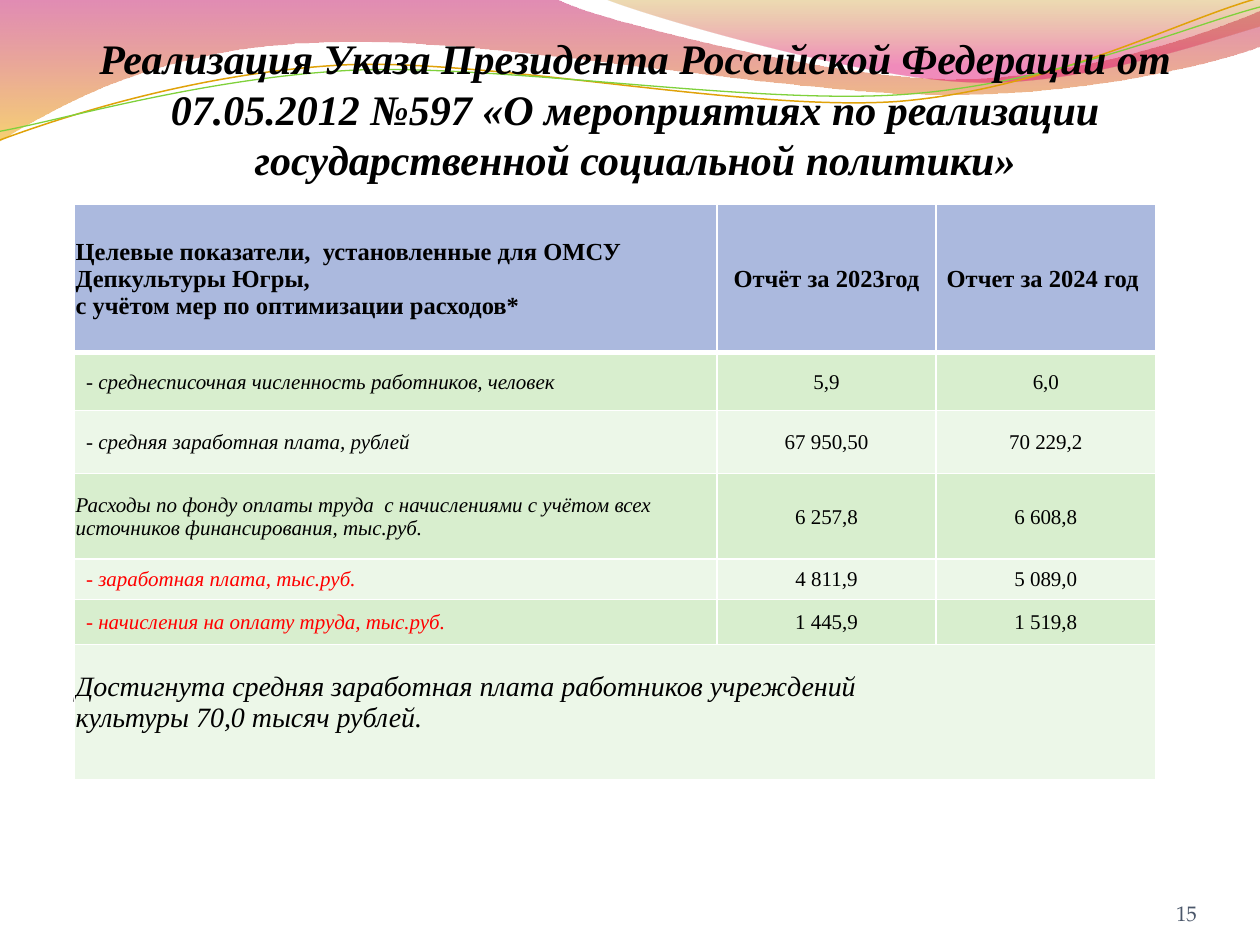
import pptx
import pptx.dml.color
import pptx.enum.text
import pptx.oxml
import pptx.oxml.ns
import pptx.util

Pt = pptx.util.Pt
RGBColor = pptx.dml.color.RGBColor
ALIGN = pptx.enum.text.PP_ALIGN
ANCHOR = pptx.enum.text.MSO_ANCHOR
qn = pptx.oxml.ns.qn

BLACK = RGBColor(0x00, 0x00, 0x00)
WHITE = RGBColor(0xFF, 0xFF, 0xFF)
RED = RGBColor(0xFF, 0x00, 0x00)
SLATE = RGBColor(0x4B, 0x57, 0x6A)
HEADER_BLUE = RGBColor(0xAB, 0xB9, 0xDE)
BAND_DARK = RGBColor(0xD8, 0xEE, 0xCE)
BAND_LIGHT = RGBColor(0xEC, 0xF7, 0xE8)
CRIMSON = RGBColor(0xBD, 0x00, 0x59)
AMBER = RGBColor(0xF0, 0xAB, 0x00)
OCHRE = RGBColor(0xC3, 0x8B, 0x00)
PINK = RGBColor(0xE1, 0x00, 0x6B)
GOLD = RGBColor(0xE0, 0xA2, 0x09)
GREEN = RGBColor(0x7F, 0xD1, 0x3B)

SERIF = "Times New Roman"
PAGE_FONT = "TeX Gyre Pagella"
NAMESPACE = 'xmlns:a="http://schemas.openxmlformats.org/drawingml/2006/main"'

RIBBONS = [
    ([(0, 0), (317, -1), (343, 12, 478, 45, 546, 45), (614, 45, 690, 19, 720, 6),
      (721, 26), (708, 32, 626, 55, 537, 54), (448, 54, 275, 20, 185, 24),
      (93, 26, 33, 60, -1, 81)],
     [(0, CRIMSON, 45), (1, AMBER, 55)]),
    ([(345, -1), (366, 8, 491, 45, 554, 47), (616, 50, 692, 23, 720, 15), (720, 0)],
     [(0, OCHRE, 30), (0.8, PINK, 45)]),
]
THREADS = [
    ([(0, 80), (35, 67, 114, 41, 199, 37), (284, 34, 427, 64, 513, 58),
      (600, 51, 675, 11, 719, -1)], GOLD, 0.85),
    ([(0, 75), (34, 69, 118, 44, 204, 40), (290, 37, 430, 60, 516, 54),
      (602, 48, 678, 15, 720, 4)], GREEN, 0.75),
]

COLUMN_WIDTHS = [367.2, 125.3, 125.3]
HEADERS = ["Целевые показатели,  установленные для ОМСУ Депкультуры Югры,\v"
           "с учётом мер по оптимизации расходов*",
           "Отчёт за 2023год", "Отчет за 2024 год "]
INDICATORS = [
    (33.1, BLACK, "- среднесписочная численность работников, человек", "5,9", "6,0"),
    (36, BLACK, "- средняя заработная плата, рублей", "67 950,50", "70 229,2"),
    (49, BLACK, "Расходы по фонду оплаты труда  с начислениями с учётом всех "
     "источников финансирования, тыс.руб.", "6 257,8", "6 608,8"),
    (23, RED, "- заработная плата, тыс.руб.", "4 811,9", "5 089,0"),
    (25.9, RED, "- начисления на оплату труда, тыс.руб.", "1 445,9", "1 519,8"),
]
CONCLUSION = ("Достигнута средняя заработная плата работников учреждений "
              "культуры 70,0 тысяч рублей.")


def write_text(frame, text, size=12, font=SERIF, color=BLACK, bold=False, italic=False,
               align=ALIGN.LEFT):
    paragraph = frame.paragraphs[0]
    paragraph.text = text
    paragraph.alignment = align
    for run in paragraph.runs:
        run.font.name = font
        run.font.size = Pt(size)
        run.font.color.rgb = color
        run.font.bold = bold
        run.font.italic = italic


def add_curve(slide, left, top, outline, close):
    corners = [(Pt(left + segment[-2]), Pt(top + segment[-1])) for segment in outline]
    builder = slide.shapes.build_freeform(*corners[0])
    builder.add_line_segments(corners[1:], close=close)
    curve = builder.convert_to_shape()
    curve.shadow.inherit = False
    for node, segment in zip(list(curve._element.iter(qn("a:lnTo"))), outline[1:]):
        if len(segment) == 6:
            points = "".join(
                f'<a:pt x="{Pt(left + x) - curve.left}" y="{Pt(top + y) - curve.top}"/>'
                for x, y in zip(segment[::2], segment[1::2]))
            bend = pptx.oxml.parse_xml(f"<a:cubicBezTo {NAMESPACE}>{points}</a:cubicBezTo>")
            node.getparent().replace(node, bend)
    return curve


def add_waves(slide, left, top):
    for outline, stops in RIBBONS:
        ribbon = add_curve(slide, left, top, outline, True)
        ribbon.line.fill.background()
        ribbon.fill.gradient()
        ribbon.fill.gradient_angle = 270
        for stop, (position, color, _) in zip(ribbon.fill.gradient_stops, stops):
            stop.position = position
            stop.color.rgb = color
        for node, (_, _, opacity) in zip(ribbon._element.spPr.iter(qn("a:srgbClr")), stops):
            node.append(pptx.oxml.parse_xml(f'<a:alpha {NAMESPACE} val="{opacity * 1000}"/>'))
    for outline, color, width in THREADS:
        thread = add_curve(slide, left, top, outline, False)
        thread.fill.background()
        thread.line.color.rgb = color
        thread.line.width = Pt(width)


def add_label(slide, left, top, width, height, text, margin_top=0, **style):
    frame = slide.shapes.add_textbox(Pt(left), Pt(top), Pt(width), Pt(height)).text_frame
    frame.word_wrap = True
    frame.vertical_anchor = ANCHOR.BOTTOM
    frame.margin_left = frame.margin_right = frame.margin_bottom = 0
    frame.margin_top = Pt(margin_top)
    write_text(frame, text, **style)


def format_cell(cell, color, indent=0, margin_bottom=0, **widths):
    cell.vertical_anchor = ANCHOR.MIDDLE
    cell.margin_left = Pt(0.72 + indent)
    cell.margin_right = cell.margin_top = Pt(0.72)
    cell.margin_bottom = Pt(margin_bottom)
    cell.fill.solid()
    cell.fill.fore_color.rgb = color
    properties = cell._tc.get_or_add_tcPr()
    for index, side in enumerate(("L", "R", "T", "B")):
        width = widths.get(side, 1)
        paint = f'<a:solidFill><a:srgbClr val="{WHITE}"/></a:solidFill>' if width else "<a:noFill/>"
        properties.insert(index, pptx.oxml.parse_xml(
            f'<a:ln{side} {NAMESPACE} w="{Pt(width)}">{paint}</a:ln{side}>'))


def add_indicator_table(slide, left, top):
    heights = [84.6] + [row[0] for row in INDICATORS] + [77]
    table = slide.shapes.add_table(len(heights), len(COLUMN_WIDTHS), Pt(left), Pt(top),
                                   Pt(sum(COLUMN_WIDTHS)), Pt(sum(heights))).table
    table.first_row = table.horz_banding = False
    for column, width in zip(table.columns, COLUMN_WIDTHS):
        column.width = Pt(width)
    for row, height in zip(table.rows, heights):
        row.height = Pt(height)

    for column, header in enumerate(HEADERS):
        cell = table.cell(0, column)
        format_cell(cell, HEADER_BLUE, B=3)
        write_text(cell.text_frame, header, size=14, bold=True,
                   align=ALIGN.CENTER if column else ALIGN.LEFT)

    for row, (_, color, *texts) in enumerate(INDICATORS, 1):
        for column, text in enumerate(texts):
            cell = table.cell(row, column)
            format_cell(cell, BAND_DARK if row % 2 else BAND_LIGHT,
                        indent=6 if text.startswith("-") else 0, T=3 if row == 1 else 1)
            write_text(cell.text_frame, text, color=BLACK if column else color,
                       italic=column == 0, align=ALIGN.CENTER if column else ALIGN.LEFT)

    last = len(heights) - 1
    conclusion = table.cell(last, 0)
    conclusion.merge(table.cell(last, 1))
    format_cell(conclusion, BAND_LIGHT, margin_bottom=12, R=0)
    write_text(conclusion.text_frame, CONCLUSION, size=16, italic=True)
    format_cell(table.cell(last, 2), BAND_LIGHT, L=0)


def main():
    deck = pptx.Presentation()
    deck.slide_width, deck.slide_height = Pt(720), Pt(540)
    slide = deck.slides.add_slide(deck.slide_layouts[6])
    add_waves(slide, 0, 0)
    add_label(slide, 25.2, 37.4, 675.4, 67.7,
              "Реализация Указа Президента Российской Федерации от 07.05.2012 №597 "
              "«О мероприятиях по реализации государственной социальной политики»",
              margin_top=3.6, size=24, bold=True, italic=True, align=ALIGN.CENTER)
    add_indicator_table(slide, 42.5, 116.9)
    add_label(slide, 624.2, 500.4, 59.8, 28.8, "15", font=PAGE_FONT, color=SLATE,
              align=ALIGN.RIGHT)
    deck.save("out.pptx")


if __name__ == "__main__":
    main()
